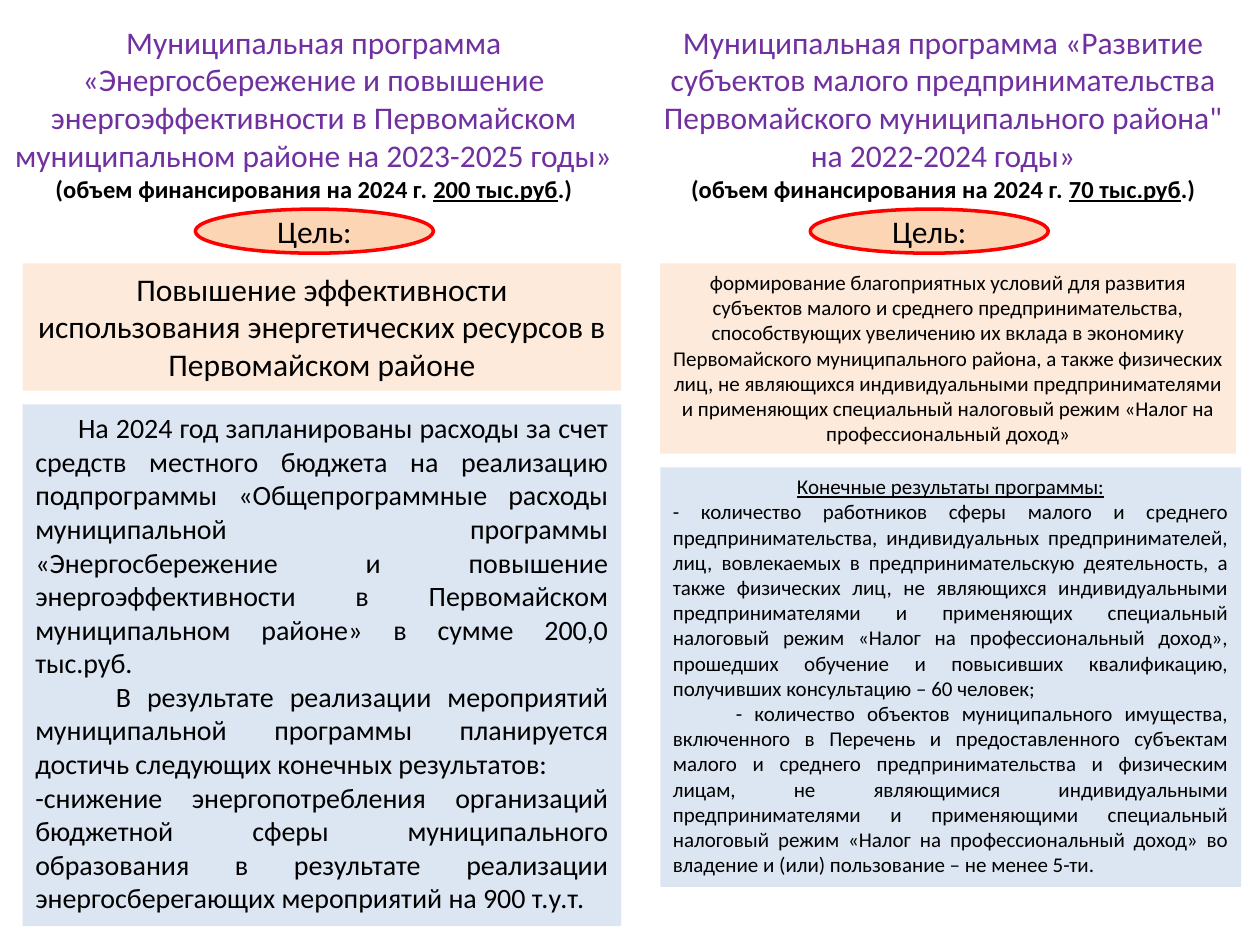
from pptx import Presentation
from pptx.dml.color import RGBColor
from pptx.enum.shapes import MSO_SHAPE
from pptx.enum.text import MSO_ANCHOR, MSO_AUTO_SIZE, PP_ALIGN
from pptx.oxml.xmlchemy import OxmlElement
from pptx.util import Inches, Pt

OVAL, RECTANGLE = MSO_SHAPE.OVAL, MSO_SHAPE.RECTANGLE
CENTER, JUSTIFY = PP_ALIGN.CENTER, PP_ALIGN.JUSTIFY
TOP, MIDDLE = MSO_ANCHOR.TOP, MSO_ANCHOR.MIDDLE
NO_AUTOFIT = MSO_AUTO_SIZE.NONE

COLORS = {
    "black": "000000", "white": "FFFFFF", "purple": "7030A0", "red": "FF0000",
    "peach": "FCD5B5", "cream": "FDEADA", "blue": "DCE6F2",
}
COMPARISON_LAYOUT = 4
OVAL_SIZE = (1.89, 0.35)
OVAL_TOP, GOAL_TOP, PANEL_GAP = 1.66, 2.09, 0.11

PROGRAMS = [
    {
        "box": (0, 0.13, 4.98, 1.55),
        "placeholders": (1, 2),
        "title": "Муниципальная программа «Энергосбережение и повышение "
                 "энергоэффективности в Первомайском муниципальном районе "
                 "на 2023-2025 годы»",
        "amount": "200 тыс.руб",
        "oval_left": 1.55,
        "panel_left": 0.18,
        "goal_size": (4.75, 1.01),
        "goal_font": 18,
        "goal": "Повышение эффективности использования энергетических ресурсов "
                "в Первомайском районе",
        "results_size": (4.75, 4.14),
        "results_font": 16,
        "results_heading": None,
        "results": [
            (0.34, "На 2024 год запланированы расходы за счет средств местного "
                   "бюджета на реализацию подпрограммы «Общепрограммные расходы "
                   "муниципальной программы «Энергосбережение и повышение "
                   "энергоэффективности в Первомайском муниципальном районе» "
                   "в сумме 200,0 тыс.руб."),
            (0.64, "В результате реализации мероприятий муниципальной программы "
                   "планируется достичь следующих конечных результатов:"),
            (0, "-снижение энергопотребления организаций бюджетной сферы "
                "муниципального образования в результате реализации "
                "энергосберегающих мероприятий на 900 т.у.т."),
        ],
    },
    {
        "box": (5.16, 0.13, 4.65, 1.55),
        "placeholders": (3, 4),
        "title": "Муниципальная программа «Развитие субъектов малого "
                 "предпринимательства Первомайского муниципального района\" "
                 "на 2022-2024 годы»",
        "amount": "70 тыс.руб",
        "oval_left": 1.27,
        "panel_left": 0.08,
        "goal_size": (4.57, 1.51),
        "goal_font": 12,
        "goal": "формирование благоприятных условий для развития субъектов "
                "малого и среднего предпринимательства, способствующих "
                "увеличению их вклада в экономику Первомайского муниципального "
                "района, а также физических лиц, не являющихся индивидуальными "
                "предпринимателями и применяющих специальный налоговый режим "
                "«Налог на профессиональный доход»",
        "results_size": (4.61, 3.33),
        "results_font": 12,
        "results_heading": "Конечные результаты программы:",
        "results": [
            (0, "- количество работников сферы малого и среднего "
                "предпринимательства, индивидуальных предпринимателей, лиц, "
                "вовлекаемых в предпринимательскую деятельность, а также "
                "физических лиц, не являющихся индивидуальными "
                "предпринимателями и применяющих специальный налоговый режим "
                "«Налог на профессиональный доход», прошедших обучение и "
                "повысивших квалификацию, получивших консультацию – 60 человек;"),
            (0.5, "- количество объектов муниципального имущества, включенного "
                  "в Перечень и предоставленного субъектам малого и среднего "
                  "предпринимательства и физическим лицам, не являющимися "
                  "индивидуальными предпринимателями и применяющими специальный "
                  "налоговый режим «Налог на профессиональный доход» во "
                  "владение и (или) пользование – не менее 5-ти."),
        ],
    },
]


def rgb(name):
    return RGBColor.from_string(COLORS[name])


def place(shape, left, top, width, height):
    values = {"left": left, "top": top, "width": width, "height": height}
    for name, value in values.items():
        setattr(shape, name, Inches(value))


def format_box(shape, fill, anchor=TOP):
    shape.fill.solid()
    shape.fill.fore_color.rgb = rgb(fill)
    frame = shape.text_frame
    settings = {"word_wrap": True, "auto_size": NO_AUTOFIT, "vertical_anchor": anchor}
    for name, value in settings.items():
        setattr(frame, name, value)


def add_shape(page, kind, box, fill, anchor=TOP):
    shape = page.shapes.add_shape(kind, *(Inches(value) for value in box))
    shape.shadow.inherit = False
    shape.line.fill.background()
    format_box(shape, fill, anchor)
    return shape


def write(shape, paragraphs):
    """Fill a shape from (alignment, first-line indent, [(text, format)]) items."""
    frame = shape.text_frame
    for number, (alignment, indent, spans) in enumerate(paragraphs):
        para = frame.add_paragraph() if number else frame.paragraphs[0]
        settings = {"alignment": alignment, "line_spacing": 1.0,
                    "space_before": Pt(0), "space_after": Pt(0)}
        for name, value in settings.items():
            setattr(para, name, value)
        properties = para._p.get_or_add_pPr()
        properties.set("marL", "0")
        properties.set("indent", str(Inches(indent)))
        properties.append(OxmlElement("a:buNone"))
        for text, style in spans:
            span = para.add_run()
            span.text = text
            values = {"name": "Calibri", "bold": False, "underline": False}
            values.update(style)
            color = values.pop("color", "black")
            values["size"] = Pt(values["size"])
            for name, value in values.items():
                setattr(span.font, name, value)
            span.font.color.rgb = rgb(color)


def fill_heading(heading, box, program):
    place(heading, *box)
    format_box(heading, "white")
    bold = {"size": 14, "bold": True}
    write(heading, [
        (CENTER, 0, [(program["title"], {"size": 18, "color": "purple"})]),
        (CENTER, 0, [("(объем финансирования на 2024 г. ", bold),
                     (program["amount"], {**bold, "underline": True}),
                     (".)", bold)]),
    ])


def add_goal(page, left, program):
    oval = add_shape(page, OVAL, (left + program["oval_left"], OVAL_TOP, *OVAL_SIZE),
                     "peach", MIDDLE)
    oval.line.color.rgb = rgb("red")
    oval.line.width = Pt(2)
    write(oval, [(CENTER, 0, [("Цель:", {"size": 18})])])

    box = (left + program["panel_left"], GOAL_TOP, *program["goal_size"])
    panel = add_shape(page, RECTANGLE, box, "cream")
    write(panel, [(CENTER, 0, [(program["goal"], {"size": program["goal_font"]})])])


def fill_results(panel, left, program):
    top = GOAL_TOP + program["goal_size"][1] + PANEL_GAP
    place(panel, left + program["panel_left"], top, *program["results_size"])
    format_box(panel, "blue")
    style = {"size": program["results_font"]}
    paragraphs = [(JUSTIFY, indent, [(text, style)])
                  for indent, text in program["results"]]
    if program["results_heading"]:
        heading = (program["results_heading"], {**style, "underline": True})
        paragraphs.insert(0, (CENTER, 0, [heading]))
    write(panel, paragraphs)


def add_program(page, program):
    holders = {holder.placeholder_format.idx: holder for holder in page.placeholders}
    heading, results = (holders[index] for index in program["placeholders"])
    left = program["box"][0]
    fill_heading(heading, program["box"], program)
    add_goal(page, left, program)
    fill_results(results, left, program)


def main():
    deck = Presentation()
    deck.slide_width, deck.slide_height = Inches(10), Inches(7.5)
    page = deck.slides.add_slide(deck.slide_layouts[COMPARISON_LAYOUT])
    title = page.shapes.title
    title.element.getparent().remove(title.element)
    for program in PROGRAMS:
        add_program(page, program)
    deck.save("out.pptx")


if __name__ == "__main__":
    main()
